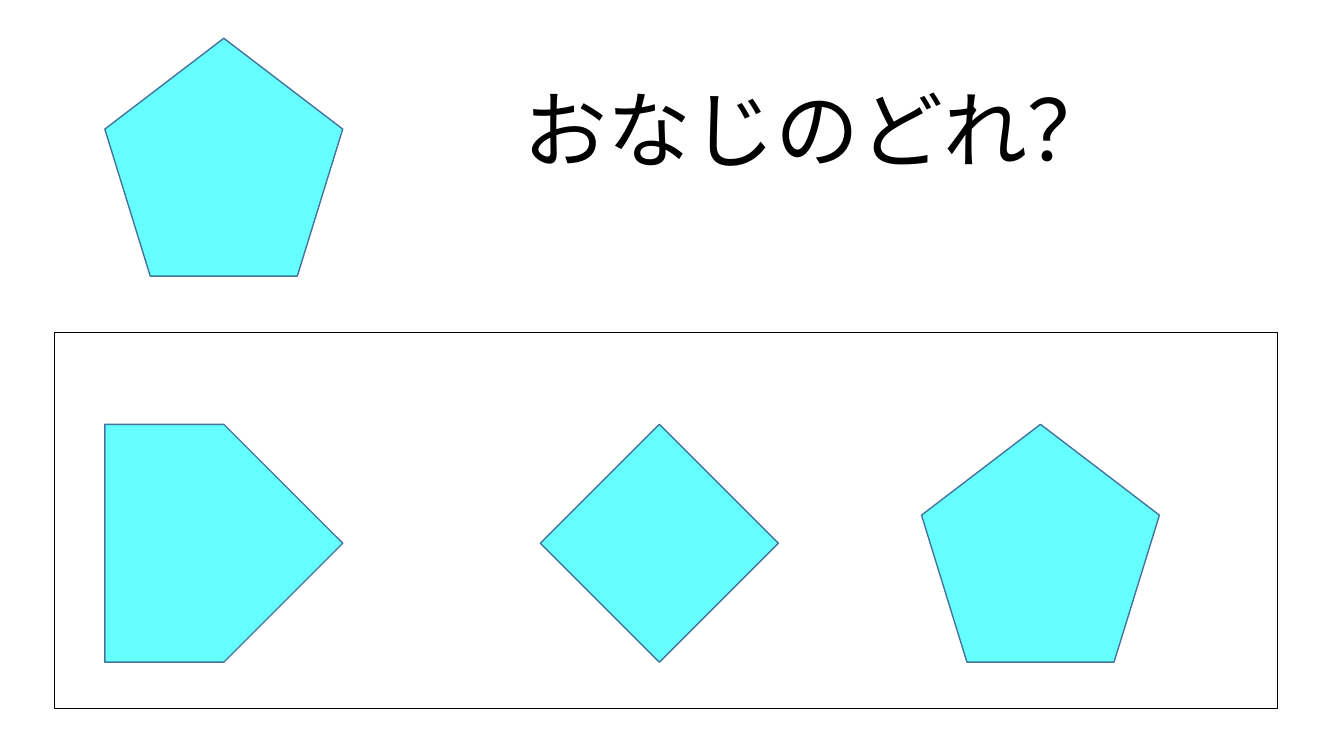
from lxml import etree
from pptx import Presentation
from pptx.dml.color import RGBColor
from pptx.enum.shapes import MSO_SHAPE
from pptx.enum.text import MSO_ANCHOR, MSO_AUTO_SIZE, PP_ALIGN
from pptx.oxml.ns import qn
from pptx.util import Inches, Pt

PENTAGON = MSO_SHAPE.REGULAR_PENTAGON
HOME_PLATE = MSO_SHAPE.PENTAGON
DIAMOND = MSO_SHAPE.DIAMOND
RECTANGLE = MSO_SHAPE.RECTANGLE

FIGURE_SIZE = 2.36
SAMPLE_TOP, CHOICE_TOP = 0.38, 4.21
LEFT = 1.04
CHOICES = [(HOME_PLATE, LEFT), (DIAMOND, 5.36), (PENTAGON, 9.14)]


def color(value):
    return RGBColor.from_string(value)


class QuizSlide:
    FONT = "Noto Sans CJK JP"
    FIGURE_FILL = "66FFFF"
    FIGURE_LINE = "43739E"
    BLACK = "000000"

    def __init__(self, prs):
        self.s = prs.slides.add_slide(prs.slide_layouts[0])
        subtitle = self.s.placeholders[1].element
        subtitle.getparent().remove(subtitle)

    def title(self, text, left, top, width, height, size):
        sp = self.s.shapes.title
        box = {"left": left, "top": top, "width": width, "height": height}
        for name, value in box.items():
            setattr(sp, name, Inches(value))
        tf = sp.text_frame
        frame_format = {"word_wrap": True, "auto_size": MSO_AUTO_SIZE.NONE,
                        "vertical_anchor": MSO_ANCHOR.BOTTOM}
        for name, value in frame_format.items():
            setattr(tf, name, value)
        p = tf.paragraphs[0]
        p.alignment = PP_ALIGN.CENTER
        p.line_spacing = 0.9
        r = p.add_run()
        r.text = text
        for name, value in {"name": self.FONT, "size": Pt(size), "bold": False}.items():
            setattr(r.font, name, value)
        r.font.color.rgb = color(self.BLACK)
        latin = r.font._element.find(qn("a:latin"))
        ea = etree.Element(qn("a:ea"), typeface=self.FONT)
        latin.addnext(ea)

    def shape(self, kind, left, top, width, height, line, fill=None):
        sp = self.s.shapes.add_shape(
            kind, Inches(left), Inches(top), Inches(width), Inches(height))
        sp.shadow.inherit = False
        if fill:
            sp.fill.solid()
            sp.fill.fore_color.rgb = color(fill)
        else:
            sp.fill.background()
        sp.line.color.rgb = color(line)
        sp.line.width = Pt(1)

    def figure(self, kind, left, top):
        self.shape(kind, left, top, FIGURE_SIZE, FIGURE_SIZE,
                   self.FIGURE_LINE, self.FIGURE_FILL)

    def frame(self, left, top, width, height):
        self.shape(RECTANGLE, left, top, width, height, self.BLACK)


def main():
    prs = Presentation()
    prs.slide_width = Inches(13.33)
    prs.slide_height = Inches(7.5)
    quiz = QuizSlide(prs)
    quiz.title("おなじのどれ？", 3.11, 0.65, 10, 1.18, 60)
    quiz.figure(PENTAGON, LEFT, SAMPLE_TOP)
    for kind, left in CHOICES:
        quiz.figure(kind, left, CHOICE_TOP)
    quiz.frame(0.54, 3.3, 12.13, 3.73)
    prs.save("out.pptx")


if __name__ == "__main__":
    main()
